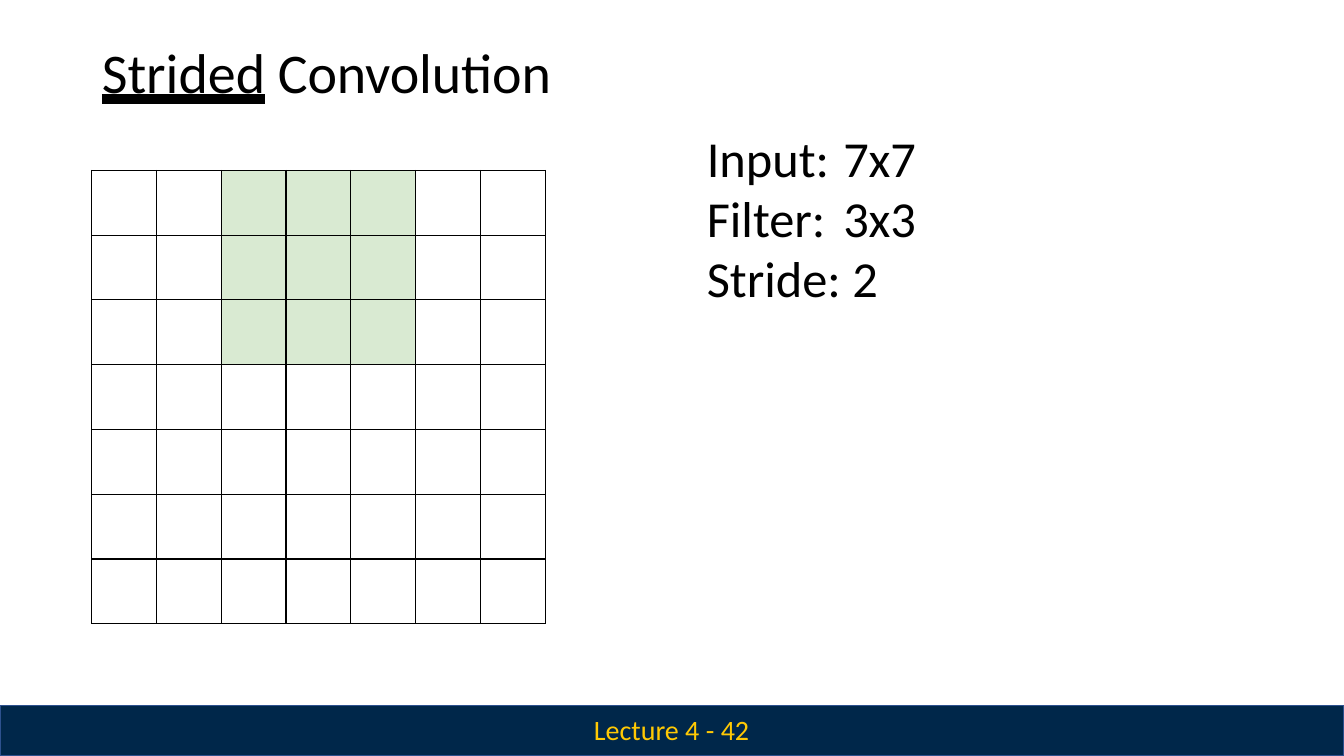
from lxml import etree
from pptx import Presentation
from pptx.dml.color import RGBColor
from pptx.enum.shapes import MSO_SHAPE
from pptx.enum.text import MSO_UNDERLINE, PP_ALIGN
from pptx.oxml.ns import qn
from pptx.util import Inches, Pt

COLORS = {
    "black": "000000",
    "navy": "00274A",
    "navy_edge": "2D518E",
    "gold": "FFC904",
    "filter_green": "D9EAD2",
}
GRID_SIZE = 7
GRID_SIDE = 4.5
FILTER_ROWS = range(0, 3)
FILTER_COLUMNS = range(2, 5)


def color(name):
    return RGBColor.from_string(COLORS[name])


def add_text(slide, left, top, width, height, inset_top, runs, size, color_name):
    shape = slide.shapes.add_textbox(Inches(left), Inches(top), Inches(width), Inches(height))
    frame = shape.text_frame
    frame.word_wrap = True
    frame.margin_left = frame.margin_right = frame.margin_bottom = 0
    frame.margin_top = Inches(inset_top)
    paragraph = frame.paragraphs[0]
    paragraph._p.get_or_add_pPr().set("marL", str(Inches(0.01)))
    for text, spacing in runs:
        run = paragraph.add_run()
        run.text = text
        run.font.name = "Calibri"
        run.font.size = Pt(size)
        run.font.color.rgb = color(color_name)
        run._r.get_or_add_rPr().set("spc", str(round(spacing * 100)))
    return paragraph


presentation = Presentation()
presentation.slide_width = Inches(13.33)
presentation.slide_height = Inches(7.5)
slide = presentation.slides.add_slide(presentation.slide_layouts[6])

footer = slide.shapes.add_shape(MSO_SHAPE.RECTANGLE, 0, Inches(7), Inches(13.33), Inches(0.5))
footer.shadow.inherit = False
footer.fill.solid()
footer.fill.fore_color.rgb = color("navy")
footer.line.color.rgb = color("navy_edge")
footer.line.width = Pt(1)

title_runs = [("Strided", 0), (" ", -0.4), ("Convolution", -0.1)]
title = add_text(slide, 1, 0.36, 11.48, 0.69, 0.01, title_runs, 40, "black")
title.space_before = Pt(1)
title.runs[0].font.underline = MSO_UNDERLINE.HEAVY_LINE

page_runs = [("Lecture 4 - ", 0), ("42", -0.2)]
page = add_text(slide, 5.88, 7.07, 1.61, 0.34, 0, page_runs, 20, "gold")
page.space_before = Pt(0.1)

grid_frame = slide.shapes.add_table(
    GRID_SIZE, GRID_SIZE, Inches(0.91), Inches(1.69), Inches(GRID_SIDE), Inches(GRID_SIDE)
)
grid = grid_frame.table
grid.first_row = False
grid.horz_banding = False
for index in range(GRID_SIZE):
    grid.columns[index].width = Inches(GRID_SIDE / GRID_SIZE)
    grid.rows[index].height = Inches(GRID_SIDE / GRID_SIZE)
    for column in range(GRID_SIZE):
        cell = grid.cell(index, column)
        properties = cell._tc.get_or_add_tcPr()
        for side in ("a:lnL", "a:lnR", "a:lnT", "a:lnB"):
            border = etree.SubElement(properties, qn(side), w=str(Pt(1)))
            border_fill = etree.SubElement(border, qn("a:solidFill"))
            etree.SubElement(border_fill, qn("a:srgbClr"), val=COLORS["black"])
        if index in FILTER_ROWS and column in FILTER_COLUMNS:
            cell.fill.solid()
            cell.fill.fore_color.rgb = color("filter_green")
        else:
            cell.fill.background()

setting_runs = [
    ("Input: ", 0), ("7x7 ", -0.2),
    ("Filter: ", 0), ("3x3 ", -0.2),
    ("Stride: ", 0), ("2", -0.5),
]
settings = add_text(slide, 7, 1.23, 2.08, 1.82, 0.03, setting_runs, 36, "black")
settings.alignment = PP_ALIGN.JUSTIFY
settings.line_spacing = Pt(43)
settings.space_before = Pt(2.1)

presentation.save("out.pptx")
